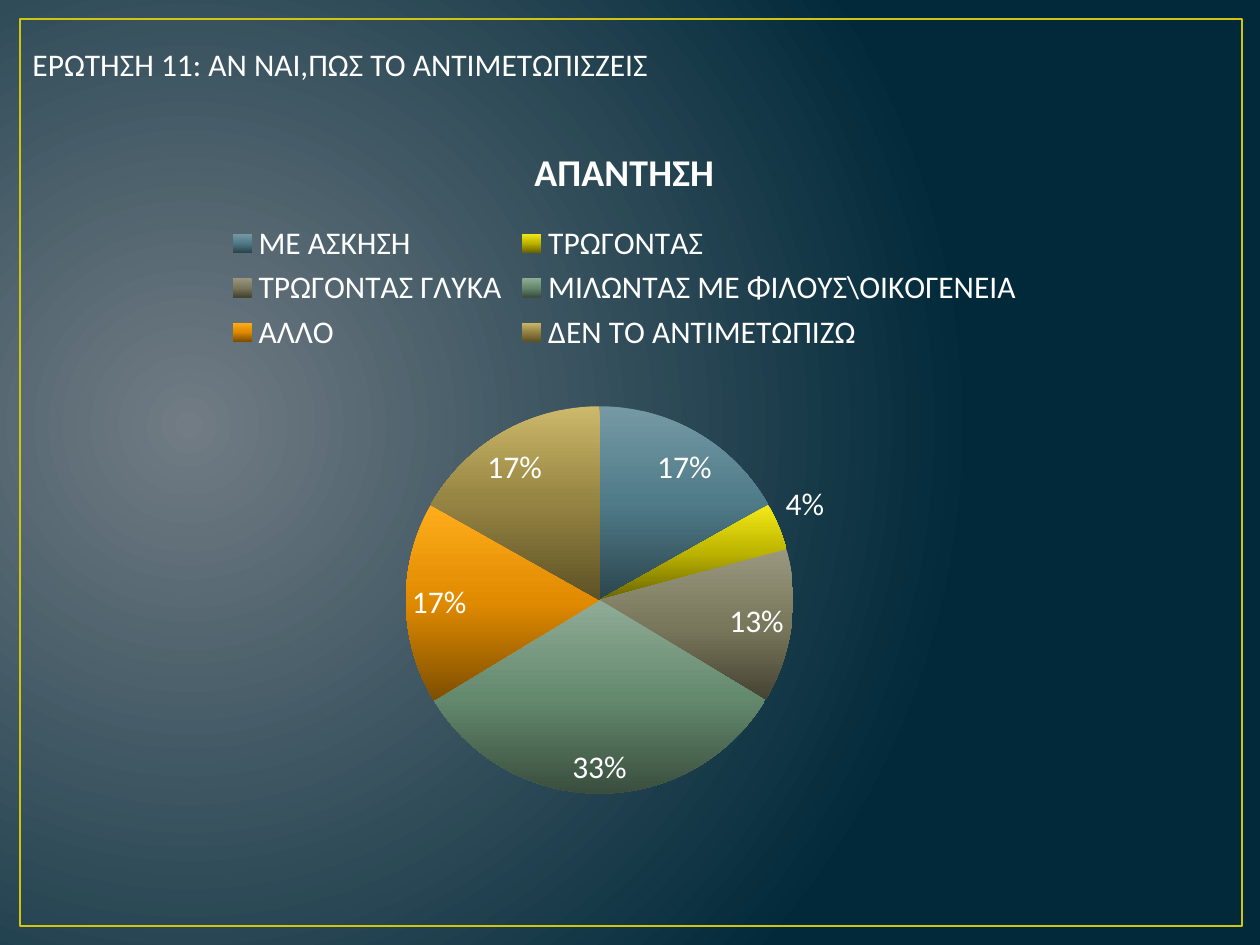
import pptx
import pptx.util
import pptx.oxml
import pptx.oxml.ns
import pptx.chart.data
import pptx.enum.chart
import pptx.enum.shapes
import pptx.enum.text
from dataclasses import dataclass
from pptx.dml.color import RGBColor

PX = 914400 // 126  # EMU in one px


@dataclass(frozen=True)
class Theme:
    font: str = "Calibri"
    text: str = "FFFFFF"
    border: str = "CFC60D"
    glow: str = "717C84"
    night: str = "01293A"
    body: int = 18
    chart_title: float = 21.6


THEME = Theme()

# answer, percent, gradient from top to bottom of the slice
ANSWERS = [
    ("ΜΕ ΑΣΚΗΣΗ", 17, ("759AA5", "4F7A88", "2B454D")),
    ("ΤΡΩΓΟΝΤΑΣ", 4, ("F4EA18", "BDB400", "696400")),
    ("ΤΡΩΓΟΝΤΑΣ ΓΛΥΚΑ", 13, ("99987F", "7A785C", "454332")),
    ("ΜΙΛΩΝΤΑΣ ΜΕ ΦΙΛΟΥΣ\\ΟΙΚΟΓΕΝΕΙΑ", 33, ("90AC97", "648A6E", "3A4E3E")),
    ("ΆΛΛΟ", 17, ("FFAD1C", "E08A00", "7F4E00")),
    ("ΔΕΝ ΤΟ ΑΝΤΙΜΕΤΩΠΙΖΩ", 17, ("CDB96B", "948341", "5E5226")),
]


def px(*lengths):
    return [pptx.util.Emu(n * PX) for n in lengths]


def set_attrs(obj, values):
    for name, value in values.items():
        setattr(obj, name, value)


def style_font(font, size=THEME.body, bold=False):
    set_attrs(font, {"name": THEME.font, "size": pptx.util.Pt(size), "bold": bold})
    font.color.rgb = RGBColor.from_string(THEME.text)


def set_gradient(fill, parent, colors, shade):
    """Fill with evenly spaced colours and the given shade element."""
    fill.gradient()
    step = 100000 // (len(colors) - 1)
    stops = "".join(
        f'<a:gs pos="{i * step}"><a:srgbClr val="{c}"/></a:gs>'
        for i, c in enumerate(colors))
    grad = pptx.oxml.parse_xml(
        f'<a:gradFill {pptx.oxml.ns.nsdecls("a")} rotWithShape="1">'
        f'<a:gsLst>{stops}</a:gsLst>{shade}</a:gradFill>')
    old = next(parent.iter(pptx.oxml.ns.qn("a:gradFill")))
    old.getparent().replace(old, grad)


def add_background(slide):
    shade = ('<a:path path="circle"><a:fillToRect l="15000" t="50000" '
             'r="85000" b="60000"/></a:path>')
    set_gradient(slide.background.fill, slide.element,
                 (THEME.glow, THEME.night), shade)


def add_border(slide, box):
    sp = slide.shapes.add_shape(pptx.enum.shapes.MSO_SHAPE.RECTANGLE, *px(*box))
    sp.shadow.inherit = False
    sp.fill.background()
    sp.line.color.rgb = RGBColor.from_string(THEME.border)
    sp.line.width = pptx.util.Pt(1.5)


def add_text(slide, box, text):
    tf = slide.shapes.add_textbox(*px(*box)).text_frame
    set_attrs(tf, {"word_wrap": True,
                   "auto_size": pptx.enum.text.MSO_AUTO_SIZE.SHAPE_TO_FIT_TEXT})
    r = tf.paragraphs[0].add_run()
    r.text = text
    style_font(r.font)


def add_pie(slide, box, title, answers):
    data = pptx.chart.data.CategoryChartData()
    data.categories = [name for name, _, _ in answers]
    data.add_series(title, [value for _, value, _ in answers])
    chart = slide.shapes.add_chart(
        pptx.enum.chart.XL_CHART_TYPE.PIE, *px(*box), data).chart
    style_font(chart.font)

    # Title and legend
    chart.has_title = True
    r = chart.chart_title.text_frame.paragraphs[0].add_run()
    r.text = title
    style_font(r.font, THEME.chart_title, True)
    chart.has_legend = True
    set_attrs(chart.legend, {
        "position": pptx.enum.chart.XL_LEGEND_POSITION.TOP,
        "include_in_layout": False})
    style_font(chart.legend.font)

    # Percent labels
    plot = chart.plots[0]
    set_attrs(plot, {"vary_by_categories": True, "has_data_labels": True})
    labels = plot.data_labels
    set_attrs(labels, {
        "show_percentage": True, "show_value": False,
        "number_format": "0%", "number_format_is_linked": False,
        "position": pptx.enum.chart.XL_LABEL_POSITION.BEST_FIT})
    style_font(labels.font)

    # Slices
    for i, (_, _, colors) in enumerate(answers):
        fmt = plot.series[0].points[i].format
        fmt.line.fill.background()
        dpt = plot.series[0]._element.findall(pptx.oxml.ns.qn("c:dPt"))[i]
        set_gradient(fmt.fill, dpt, colors, '<a:lin ang="5400000" scaled="0"/>')


def main():
    prs = pptx.Presentation()
    prs.slide_width, prs.slide_height = px(1260, 945)
    slide = prs.slides.add_slide(prs.slide_layouts[6])
    add_background(slide)
    add_border(slide, (20, 19, 1222, 907))
    add_text(slide, (20, 39, 1221, 51),
             "ΕΡΩΤΗΣΗ 11: ΑΝ ΝΑΙ,ΠΩΣ ΤΟ ΑΝΤΙΜΕΤΩΠΙΣΖΕΙΣ")
    add_pie(slide, (59, 118, 1131, 693), "ΑΠΑΝΤΗΣΗ", ANSWERS)
    prs.save("out.pptx")


if __name__ == "__main__":
    main()
